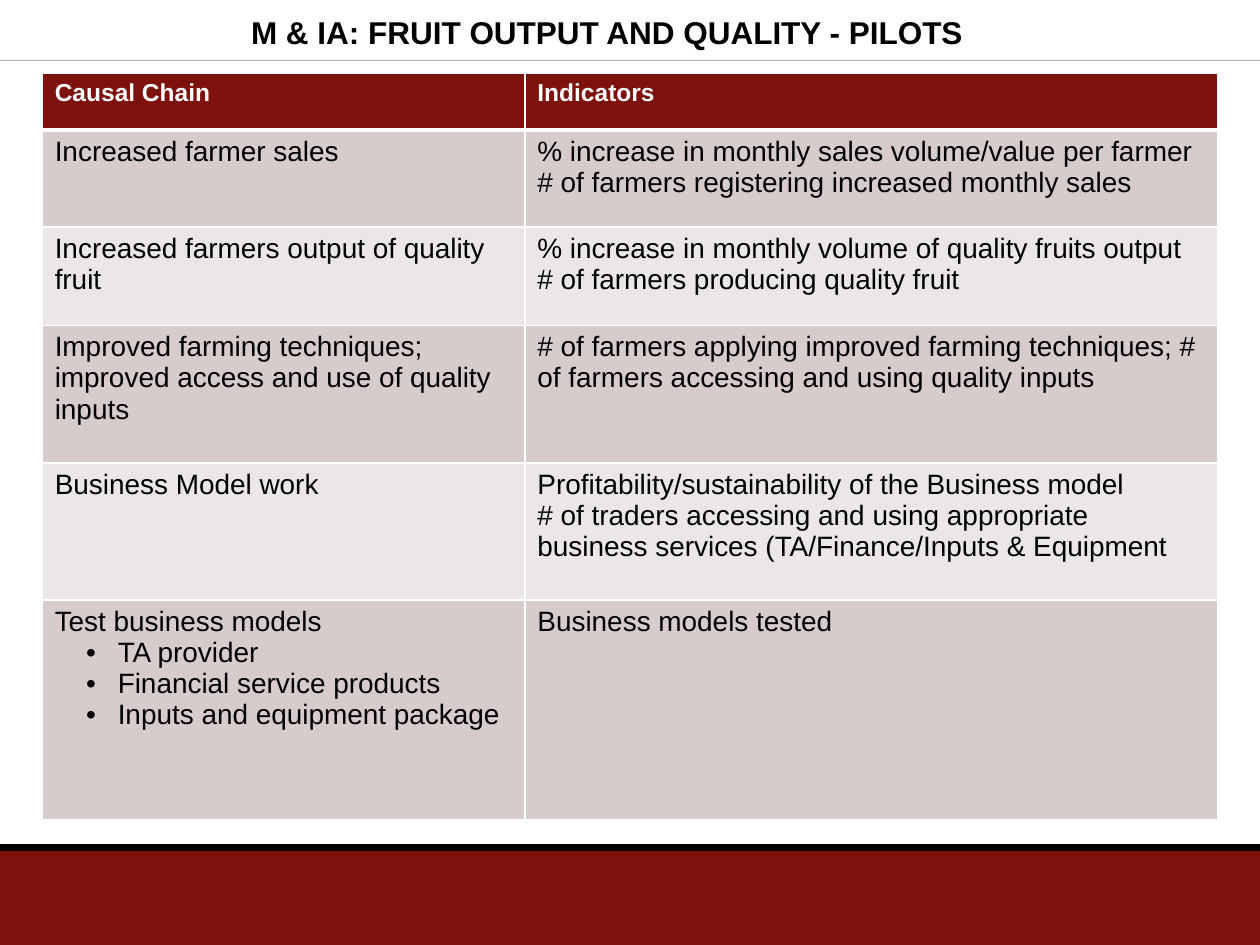
from lxml import etree
from pptx import Presentation
from pptx import util as u
from pptx.dml.color import RGBColor
from pptx.enum import shapes, text
from pptx.oxml.ns import qn

MAROON = RGBColor(0x7D, 0x11, 0x0C)
GREY = RGBColor(0xB0, 0xB2, 0xB4)
BLACK = RGBColor(0, 0, 0)
WHITE = RGBColor(0xFF, 0xFF, 0xFF)
BAND_DARK = RGBColor(0xD7, 0xCC, 0xCC)
BAND_LIGHT = RGBColor(0xEC, 0xE7, 0xE7)

PAGE_WIDTH, PAGE_HEIGHT = 25.4, 19.05
BULLET = "• "
COLUMN_WIDTHS = [9.73, 13.97]
ROW_HEIGHTS = [1.14, 1.96, 1.98, 2.77, 2.77, 4.42]
ROWS = [
    (["Causal Chain"], ["Indicators"]),
    (["Increased farmer sales"],
     ["% increase in monthly sales volume/value per farmer",
      "# of farmers registering increased monthly sales"]),
    (["Increased farmers output of quality fruit"],
     ["% increase in monthly volume of quality fruits output",
      "# of farmers producing quality fruit"]),
    (["Improved farming techniques; improved access and use of quality inputs"],
     ["# of farmers applying improved farming techniques; "
      "# of farmers accessing and using quality inputs"]),
    (["Business Model work"],
     ["Profitability/sustainability of the Business model",
      "# of traders accessing and using appropriate business services "
      "(TA/Finance/Inputs & Equipment"]),
    (["Test business models", "• TA provider", "• Financial service products",
      "• Inputs and equipment package"],
     ["Business models tested"]),
]


def set_bullet(para):
    para.level = 1
    properties = para._p.get_or_add_pPr()
    properties.set("marL", str(u.Cm(1.27)))
    properties.set("indent", str(u.Cm(-0.64)))
    etree.SubElement(properties, qn("a:buFont"), typeface="Arial")
    etree.SubElement(properties, qn("a:buChar"), char=BULLET.strip())


def write_text(frame, lines, size=16, color=BLACK, bold=False, align=text.PP_ALIGN.LEFT):
    frame.word_wrap = True
    for index, line in enumerate(lines):
        para = frame.paragraphs[0] if index == 0 else frame.add_paragraph()
        para.alignment = align
        if line.startswith(BULLET):
            set_bullet(para)
        span = para.add_run()
        span.text = line.removeprefix(BULLET)
        span.font.name = "Arial"
        span.font.size = u.Pt(size)
        span.font.bold = bold
        span.font.color.rgb = color


def add_rule(page, y, color, width):
    rule = page.shapes.add_connector(
        shapes.MSO_CONNECTOR.STRAIGHT, 0, u.Cm(y), u.Cm(PAGE_WIDTH), u.Cm(y))
    rule.line.color.rgb = color
    rule.line.width = u.Pt(width)
    etree.SubElement(rule._element.spPr, qn("a:effectLst"))


def add_footer_band(page):
    height = 1.9
    band = page.shapes.add_shape(
        shapes.MSO_SHAPE.RECTANGLE, 0, u.Cm(PAGE_HEIGHT - height),
        u.Cm(PAGE_WIDTH), u.Cm(height))
    band.shadow.inherit = False
    band.fill.solid()
    band.fill.fore_color.rgb = MAROON
    band.line.fill.background()


def add_title(page, wording):
    title = page.shapes.title
    title.left, title.top = u.Cm(1.47), 0
    title.width, title.height = u.Cm(21.54), u.Cm(1.27)
    title.text_frame.vertical_anchor = text.MSO_ANCHOR.MIDDLE
    write_text(title.text_frame, [wording], size=18, bold=True,
               align=text.PP_ALIGN.CENTER)


def set_borders(cell, **widths):
    properties = cell._tc.get_or_add_tcPr()
    for side in "LRTB":
        border = etree.SubElement(properties, qn(f"a:ln{side}"),
                                  w=str(u.Pt(widths.get(side, 1))))
        fill = etree.SubElement(border, qn("a:solidFill"))
        etree.SubElement(fill, qn("a:srgbClr"), val=str(WHITE))


def add_indicator_table(page):
    table = page.shapes.add_table(
        len(ROWS), len(COLUMN_WIDTHS), u.Cm(0.85), u.Cm(1.48),
        u.Cm(sum(COLUMN_WIDTHS)), u.Cm(sum(ROW_HEIGHTS))).table
    table.horz_banding = False
    for column, width in zip(table.columns, COLUMN_WIDTHS):
        column.width = u.Cm(width)
    for index, (row, height, entries) in enumerate(zip(table.rows, ROW_HEIGHTS, ROWS)):
        row.height = u.Cm(height)
        header = index == 0
        band = MAROON if header else BAND_DARK if index % 2 else BAND_LIGHT
        for cell, lines in zip(row.cells, entries):
            if header:
                set_borders(cell, B=3)
                write_text(cell.text_frame, lines, size=14, color=WHITE, bold=True)
            else:
                set_borders(cell, T=3 if index == 1 else 1)
                write_text(cell.text_frame, lines)
            cell.fill.solid()
            cell.fill.fore_color.rgb = band


def main():
    deck = Presentation()
    deck.slide_width, deck.slide_height = u.Cm(PAGE_WIDTH), u.Cm(PAGE_HEIGHT)
    page = deck.slides.add_slide(deck.slide_layouts.get_by_name("Title Only"))
    add_footer_band(page)
    add_rule(page, 1.22, GREY, 0.75)
    add_rule(page, 17.09, BLACK, 3.75)
    add_indicator_table(page)
    add_title(page, "M & IA: FRUIT OUTPUT AND QUALITY - PILOTS")
    deck.save("out.pptx")


if __name__ == "__main__":
    main()
